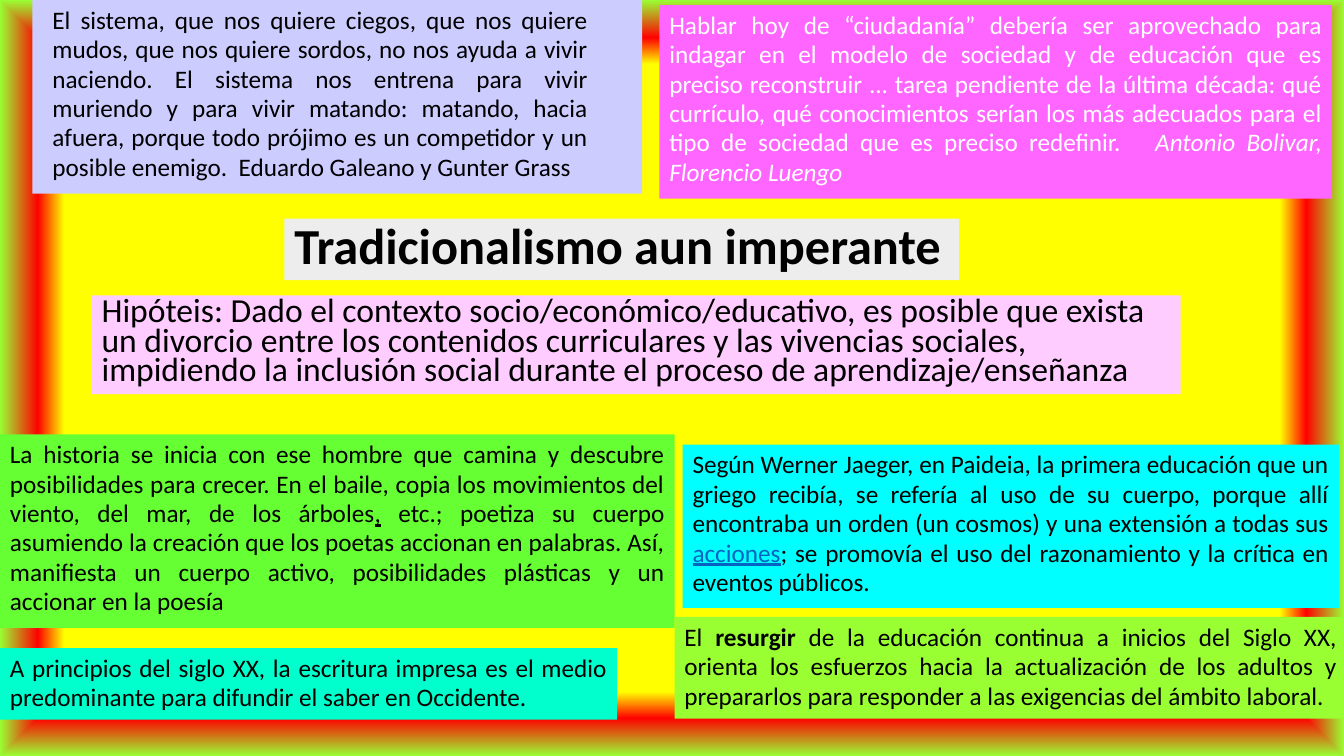
from dataclasses import dataclass

from pptx import Presentation, oxml
from pptx import util as u
from pptx.dml import color
from pptx.enum import text
from pptx.oxml import ns

COLOURS = {
    "black": "000000", "white": "FFFFFF", "link": "0563C1",
    "yellow": "FFFF00", "red": "FF0000", "lime": "99FF33", "green": "66FF33",
    "rose": "FFCCFF", "lavender": "CCCCFF", "magenta": "FF66FF",
    "cyan": "00FFFF", "mint": "00FFCC", "grey": "EDEDED",
}
BACKGROUND_STOPS = [(83, "yellow"), (90, "red"), (100, "lime"), (100, "green")]
SIDE_INSET, TOP_INSET = 0.1, 0.05


@dataclass(frozen=True)
class Span:
    words: str
    bold: bool = False
    italic: bool = False
    underline: bool = False
    colour: str = ""


@dataclass(frozen=True)
class Note:
    left: float
    top: float
    width: float
    height: float
    fill: str
    spans: tuple[Span, ...]
    size: int = 18
    leading: int = 21
    justified: bool = True
    colour: str = "black"
    left_inset: float = SIDE_INSET
    right_inset: float = SIDE_INSET


NOTES = [
    # Hypothesis
    Note(0.91, 2.93, 10.8, 0.98, "rose", (
        Span("Hipóteis: Dado el contexto socio/económico/educativo, es posible que exista "
             "un divorcio entre los contenidos curriculares y las vivencias sociales, "
             "impidiendo la inclusión social durante el proceso de aprendizaje/enseñanza"),
    ), size=24, justified=False),
    # Quotations along the top
    Note(0.32, 0, 6.05, 1.92, "lavender", (
        Span("El sistema, que nos quiere ciegos, que nos quiere mudos, que nos quiere sordos, "
             "no nos ayuda a vivir naciendo. El sistema nos entrena para vivir muriendo y para "
             "vivir matando: matando, hacia afuera, porque todo prójimo es un competidor y un "
             "posible enemigo.  Eduardo Galeano y Gunter Grass "),
    ), left_inset=0.2, right_inset=0.54),
    Note(6.54, 0.05, 6.67, 1.92, "magenta", (
        Span("Hablar hoy de “ciudadanía” debería ser aprovechado para indagar en el modelo de "
             "sociedad y de educación que es preciso reconstruir ... tarea pendiente de la "
             "última década: qué currículo, qué conocimientos serían los más adecuados para el "
             "tipo de sociedad que es preciso redefinir.   "),
        Span("Antonio Bolivar, Florencio Luengo", italic=True),
    ), colour="white"),
    # History along the bottom
    Note(0, 4.31, 6.69, 1.92, "green", (
        Span("La historia se inicia con ese hombre que camina y descubre posibilidades para "
             "crecer. En el baile, copia los movimientos del viento, del mar, de los árboles"),
        Span(",", underline=True),
        Span(" etc.; poetiza su cuerpo asumiendo la creación que los poetas accionan en "
             "palabras. Así, manifiesta un cuerpo activo, posibilidades plásticas y un "
             "accionar en la poesía"),
    )),
    Note(6.77, 4.41, 6.51, 1.62, "cyan", (
        Span("Según Werner Jaeger, en Paideia, la primera educación que un griego recibía, se "
             "refería al uso de su cuerpo, porque allí encontraba un orden (un cosmos) y una "
             "extensión a todas sus "),
        Span("acciones", underline=True, colour="link"),
        Span("; se promovía el uso del razonamiento y la crítica en eventos públicos."),
    )),
    Note(0, 6.43, 6.12, 0.71, "mint", (
        Span("A principios del siglo XX, la escritura impresa es el medio predominante para "
             "difundir el saber en Occidente."),
    )),
    Note(6.69, 6.12, 6.67, 1.01, "lime", (
        Span("El "),
        Span("resurgir", bold=True),
        Span(" de la educación continua a inicios del Siglo XX, orienta los esfuerzos hacia la "
             "actualización de los adultos y prepararlos para responder a las exigencias del "
             "ámbito laboral. "),
    )),
    # Title
    Note(2.82, 2.17, 6.69, 0.61, "grey", (
        Span("Tradicionalismo aun imperante", bold=True),
    ), size=36, leading=36, justified=False),
]


def rgb(name: str) -> color.RGBColor:
    return color.RGBColor.from_string(COLOURS[name])


def apply(target, values: dict) -> None:
    for name, value in values.items():
        setattr(target, name, value)


def paint_background(page) -> None:
    """Glowing frame: a rectangular gradient around a yellow centre."""
    fill = page.background.fill
    fill.solid()
    fill.fore_color.rgb = rgb("yellow")
    stops = "".join(
        f'<a:gs pos="{position * 1000}"><a:srgbClr val="{COLOURS[name]}"/></a:gs>'
        for position, name in BACKGROUND_STOPS)
    gradient = oxml.parse_xml(
        f'<a:gradFill {ns.nsdecls("a")} rotWithShape="1"><a:gsLst>{stops}</a:gsLst>'
        '<a:path path="rect"><a:fillToRect l="50000" t="50000" r="50000" b="50000"/>'
        '</a:path></a:gradFill>')
    solid = page.background._cSld.find(".//" + ns.qn("p:bgPr")).find(ns.qn("a:solidFill"))
    solid.getparent().replace(solid, gradient)


def draw_note(page, note: Note) -> None:
    box = page.shapes.add_textbox(*map(u.Inches, (note.left, note.top, note.width, note.height)))
    box.fill.solid()
    box.fill.fore_color.rgb = rgb(note.fill)
    apply(box.text_frame, {
        "word_wrap": True,
        "auto_size": text.MSO_AUTO_SIZE.SHAPE_TO_FIT_TEXT,
        "margin_left": u.Inches(note.left_inset),
        "margin_right": u.Inches(note.right_inset),
        "margin_top": u.Inches(TOP_INSET),
        "margin_bottom": u.Inches(TOP_INSET),
    })
    para = box.text_frame.paragraphs[0]
    apply(para, {
        "alignment": text.PP_ALIGN.JUSTIFY if note.justified else text.PP_ALIGN.LEFT,
        "line_spacing": u.Pt(note.leading),
    })
    for span in note.spans:
        run = para.add_run()
        run.text = span.words
        apply(run.font, {
            "name": "Calibri", "size": u.Pt(note.size),
            "bold": span.bold, "italic": span.italic, "underline": span.underline,
        })
        run.font.color.rgb = rgb(span.colour or note.colour)


def main() -> None:
    deck = Presentation()
    deck.slide_width, deck.slide_height = u.Inches(13.33), u.Inches(7.5)
    page = deck.slides.add_slide(deck.slide_layouts[6])
    paint_background(page)
    for note in NOTES:
        draw_note(page, note)
    deck.save("out.pptx")


if __name__ == "__main__":
    main()
